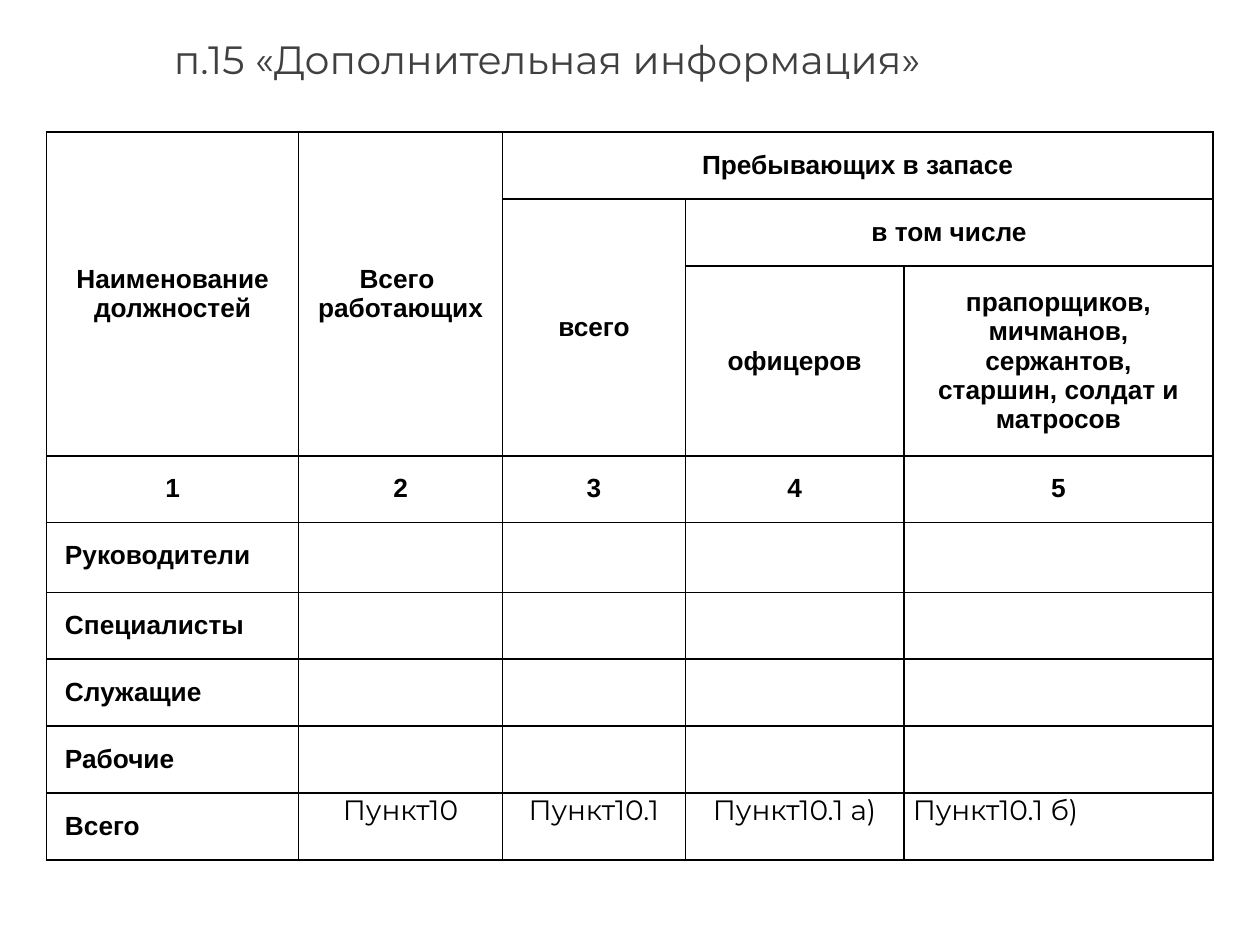
from dataclasses import dataclass

from lxml import etree
from pptx import Presentation
from pptx.dml.color import RGBColor
from pptx.enum.text import MSO_ANCHOR, MSO_AUTO_SIZE, PP_ALIGN
from pptx.oxml.ns import qn
from pptx.util import Pt

LEFT, CENTER, JUSTIFY = PP_ALIGN.LEFT, PP_ALIGN.CENTER, PP_ALIGN.JUSTIFY
TOP, MIDDLE = MSO_ANCHOR.TOP, MSO_ANCHOR.MIDDLE
NO_AUTOFIT = MSO_AUTO_SIZE.NONE
TITLE_ONLY = 5


@dataclass(frozen=True)
class TextStyle:
    font: str
    size: float
    color: str
    bold: bool = False


@dataclass(frozen=True)
class Theme:
    title: TextStyle = TextStyle("Montserrat", 22.5, "404040")
    label: TextStyle = TextStyle("Arial", 15, "000000", True)
    note: TextStyle = TextStyle("Montserrat", 16, "000000")
    border_color: str = "000000"
    border_width: float = 1
    label_margins: tuple = (10.5, 10.5)
    note_margins: tuple = (5.04, 0)


class SlideBuilder:
    def __init__(self, slide, theme):
        self.slide = slide
        self.theme = theme

    def format_text(self, text_frame, style, alignment):
        for paragraph in text_frame.paragraphs:
            paragraph.alignment = alignment
            for run in paragraph.runs:
                run.font.name = style.font
                run.font.size = Pt(style.size)
                run.font.bold = style.bold
                run.font.color.rgb = RGBColor.from_string(style.color)

    def title(self, text, left, top, width, height):
        shape = self.slide.shapes.title
        shape.left, shape.top = Pt(left), Pt(top)
        shape.width, shape.height = Pt(width), Pt(height)
        text_frame = shape.text_frame
        text_frame.text = text
        text_frame.word_wrap = True
        text_frame.auto_size = NO_AUTOFIT
        text_frame.vertical_anchor = TOP
        text_frame.paragraphs[0].space_before = Pt(10)
        self.format_text(text_frame, self.theme.title, CENTER)

    def table(self, left, top, column_widths, row_heights):
        frame = self.slide.shapes.add_table(
            len(row_heights), len(column_widths), Pt(left), Pt(top),
            Pt(sum(column_widths)), Pt(sum(row_heights)))
        table = frame.table
        table.first_row = table.horz_banding = False
        for column, width in zip(table.columns, column_widths):
            column.width = Pt(width)
        for row, height in zip(table.rows, row_heights):
            row.height = Pt(height)
        for cell in table.iter_cells():
            cell.fill.background()
            self.borders(cell)
        return table

    def borders(self, cell):
        properties = cell._tc.get_or_add_tcPr()
        for position, side in enumerate(("lnL", "lnR", "lnT", "lnB")):
            line = etree.Element(qn(f"a:{side}"), w=str(Pt(self.theme.border_width)))
            fill = etree.SubElement(line, qn("a:solidFill"))
            etree.SubElement(fill, qn("a:srgbClr"), val=self.theme.border_color)
            properties.insert(position, line)

    def cell(self, cell, text, style, margins, alignment=CENTER, anchor=TOP):
        cell.text_frame.text = text
        cell.margin_left = cell.margin_right = Pt(margins[0])
        cell.margin_top = cell.margin_bottom = Pt(margins[1])
        cell.vertical_anchor = anchor
        self.format_text(cell.text_frame, style, alignment)


# Header cells: row, column, rows spanned, columns spanned, text
HEADERS = [
    (0, 0, 3, 1, "Наименование должностей"),
    (0, 1, 3, 1, "Всего \nработающих"),
    (0, 2, 1, 3, "Пребывающих в запасе"),
    (1, 2, 2, 1, "всего"),
    (1, 3, 1, 2, "в том числе"),
    (2, 3, 1, 1, "офицеров"),
    (2, 4, 1, 1, "прапорщиков, мичманов, сержантов, старшин, солдат и матросов"),
]
POSITIONS = ["Руководители", "Специалисты", "Служащие", "Рабочие", "Всего"]
TOTALS = [("Пункт10", CENTER), ("Пункт10.1", CENTER),
          ("Пункт10.1 а)", CENTER), ("Пункт10.1 б)", LEFT)]
COLUMN_WIDTHS = [144, 116.5, 104.5, 125, 176.5]
ROW = 38.25
ROW_HEIGHTS = [ROW, ROW, 108.5, ROW, 39.75] + [ROW] * 4
NUMBER_ROW = 3


def main():
    presentation = Presentation()
    presentation.slide_width, presentation.slide_height = Pt(720), Pt(540)
    slide = presentation.slides.add_slide(presentation.slide_layouts[TITLE_ONLY])
    theme = Theme()
    builder = SlideBuilder(slide, theme)

    # Title
    builder.title("п.15 «Дополнительная информация»", -32.4, 16.56, 690.5, 507)

    # Table header with merged cells
    table = builder.table(26.64, 75.5, COLUMN_WIDTHS, ROW_HEIGHTS)
    for row, column, row_span, column_span, text in HEADERS:
        cell = table.cell(row, column)
        if row_span * column_span > 1:
            cell.merge(table.cell(row + row_span - 1, column + column_span - 1))
        builder.cell(cell, text, theme.label, theme.label_margins, anchor=MIDDLE)

    # Column numbers
    for column in range(len(COLUMN_WIDTHS)):
        builder.cell(table.cell(NUMBER_ROW, column), str(column + 1),
                     theme.label, theme.label_margins)

    # Job categories
    for row, text in enumerate(POSITIONS, NUMBER_ROW + 1):
        builder.cell(table.cell(row, 0), text, theme.label,
                     theme.label_margins, JUSTIFY)

    # References in the total row
    for column, (text, alignment) in enumerate(TOTALS, 1):
        builder.cell(table.cell(len(ROW_HEIGHTS) - 1, column), text,
                     theme.note, theme.note_margins, alignment)

    presentation.save("out.pptx")


if __name__ == "__main__":
    main()
